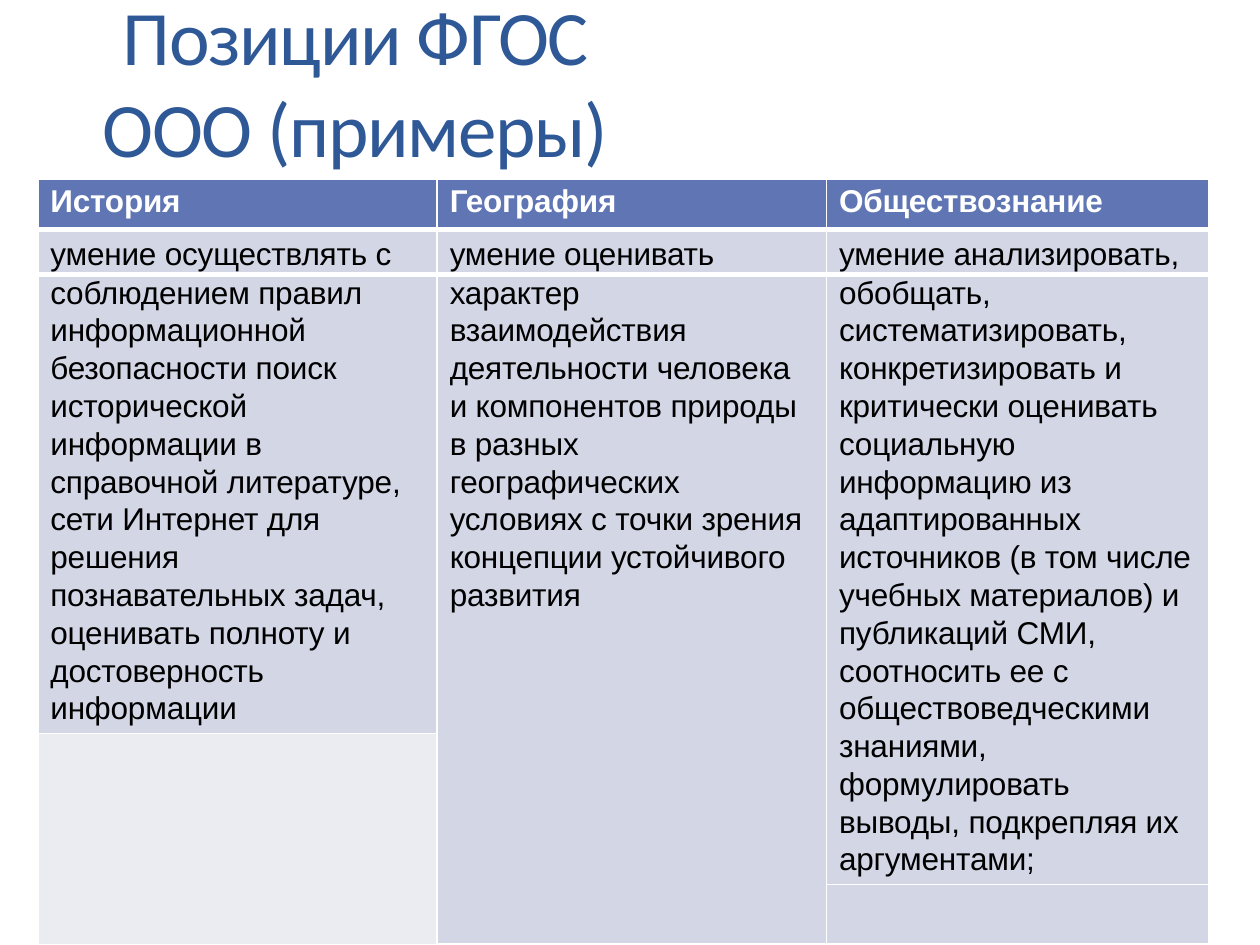
from lxml.etree import SubElement
from pptx import Presentation
from pptx.dml.color import RGBColor as RGB
from pptx.enum.text import MSO_ANCHOR as ANCHOR, PP_ALIGN as ALIGN
from pptx.oxml.ns import qn
from pptx.util import Pt

WHITE = RGB(0xFF, 0xFF, 0xFF)
BLACK = RGB(0, 0, 0)
NAVY = RGB(0x2F, 0x58, 0x97)
HEAD = RGB(0x60, 0x76, 0xB4)
BAND = RGB(0xD2, 0xD6, 0xE5)
PALE = RGB(0xEA, 0xEC, 0xF2)

HEADERS = ["История", "География", "Обществознание"]
HISTORY = [
    "умение осуществлять с", "соблюдением правил", "информационной",
    "безопасности поиск", "исторической", "информации в",
    "справочной литературе,", "сети Интернет для", "решения",
    "познавательных задач,", "оценивать полноту и", "достоверность",
    "информации",
]
GEOGRAPHY = [
    "умение оценивать", "характер", "взаимодействия",
    "деятельности человека", "и компонентов природы", "в разных",
    "географических", "условиях с точки зрения",
    "концепции устойчивого", "развития",
]
SOCIETY = [
    "умение анализировать,", "обобщать,", "систематизировать,",
    "конкретизировать и", "критически оценивать", "социальную",
    "информацию из", "адаптированных", "источников (в том числе",
    "учебных материалов) и", "публикаций СМИ,", "соотносить ее с",
    "обществоведческими", "знаниями,", "формулировать",
    "выводы, подкрепляя их", "аргументами;",
]

COLS = [228.24, 222.48, 218.16]
ROWS = [28.8, 25.92] + [21.6] * 12 + [2.88, 18.72, 21.6, 21.6, 24.48, 33.84]
SPLIT = 15  # first row of the pale block under the history column
MERGES = [(14, 1, 15, 1), (14, 2, 15, 2), (SPLIT, 0, 19, 0)]

# Horizontal rules: for the whole width by row boundary, then for one column
FULL_RULES = {0: 1, 1: 3, 2: 3, len(ROWS): 1}
COLUMN_RULES = {(0, SPLIT): 1, (2, 19): 1}


def write(p, text, size=18, font="Arial", color=BLACK, bold=False,
          spacing=-0.1, before=0, line=None, align=None):
    p.alignment = align
    p.space_before = Pt(before)
    if line:
        p.line_spacing = Pt(line)
    r = p.add_run()
    r.text = text
    r.font.size, r.font.name, r.font.bold = Pt(size), font, bold
    r.font.color.rgb = color
    r._r.get_or_add_rPr().set("spc", str(round(spacing * 100)))


def border(cell, side, width):
    """Draw one white cell edge, or clear it when width is 0."""
    ln = SubElement(cell._tc.get_or_add_tcPr(), qn(f"a:ln{side}"),
                    w=str(Pt(width)))
    if width:
        fill = SubElement(ln, qn("a:solidFill"))
        SubElement(fill, qn("a:srgbClr"), val=str(WHITE))
    else:
        SubElement(ln, qn("a:noFill"))


def rule(col, boundary):
    return FULL_RULES.get(boundary, COLUMN_RULES.get((col, boundary), 0))


class Deck:
    def __init__(self, width, height):
        self.prs = Presentation()
        self.prs.slide_width, self.prs.slide_height = Pt(width), Pt(height)
        self.s = self.prs.slides.add_slide(self.prs.slide_layouts[6])

    def title(self, text, x, y, w, h):
        tf = self.s.shapes.add_textbox(Pt(x), Pt(y), Pt(w), Pt(h)).text_frame
        tf.word_wrap = True
        tf.vertical_anchor = ANCHOR.MIDDLE
        tf.margin_left = tf.margin_right = tf.margin_bottom = 0
        tf.margin_top = Pt(0.72)
        write(tf.paragraphs[0], text, size=44, font="Calibri", color=NAVY,
              spacing=-0.8, before=1, align=ALIGN.CENTER)

    def table(self, x, y, columns):
        table = self.s.shapes.add_table(
            len(ROWS), len(COLS), Pt(x), Pt(y), Pt(sum(COLS)), Pt(sum(ROWS))
        ).table
        for col, width in zip(table.columns, COLS):
            col.width = Pt(width)
        for row, height in zip(table.rows, ROWS):
            row.height = Pt(height)
        for top, left, bottom, right in MERGES:
            table.cell(top, left).merge(table.cell(bottom, right))
        for c, lines in enumerate(columns):
            for r in range(len(ROWS)):
                self.cell(table.cell(r, c), r, c, lines.get(r))

    def cell(self, cell, r, c, text):
        cell.margin_left = Pt(7.2)
        cell.margin_right = cell.margin_bottom = 0
        cell.margin_top = Pt(2.88 if r < 2 else 0)
        p = cell.text_frame.paragraphs[0]
        if not text:
            SubElement(p._p, qn("a:endParaRPr"), sz="100")
        elif r == 0:
            write(p, text, color=WHITE, bold=True, before=3.1)
        elif r == 1:
            write(p, text, before=3.1, line=21.6)
        else:
            write(p, text, line=20.6)
        edges = {"L": 1, "R": 1, "T": rule(c, r), "B": rule(c, r + 1)}
        for side, width in edges.items():
            border(cell, side, width)
        cell.fill.solid()
        pale = c == 0 and r >= SPLIT
        cell.fill.fore_color.rgb = HEAD if r == 0 else PALE if pale else BAND


def column(header, lines):
    """Map row numbers to text, stepping over the merged row."""
    rows = [r for r in range(len(ROWS)) if r != SPLIT]
    return dict(zip(rows, [header] + lines))


def main():
    deck = Deck(720, 540)
    deck.title("Позиции ФГОС ООО (примеры)", 27.36, 30.24, 351.36, 30.96)
    deck.table(21.6, 102.24,
               [column(h, lines) for h, lines
                in zip(HEADERS, [HISTORY, GEOGRAPHY, SOCIETY])])
    deck.prs.save("out.pptx")


if __name__ == "__main__":
    main()
